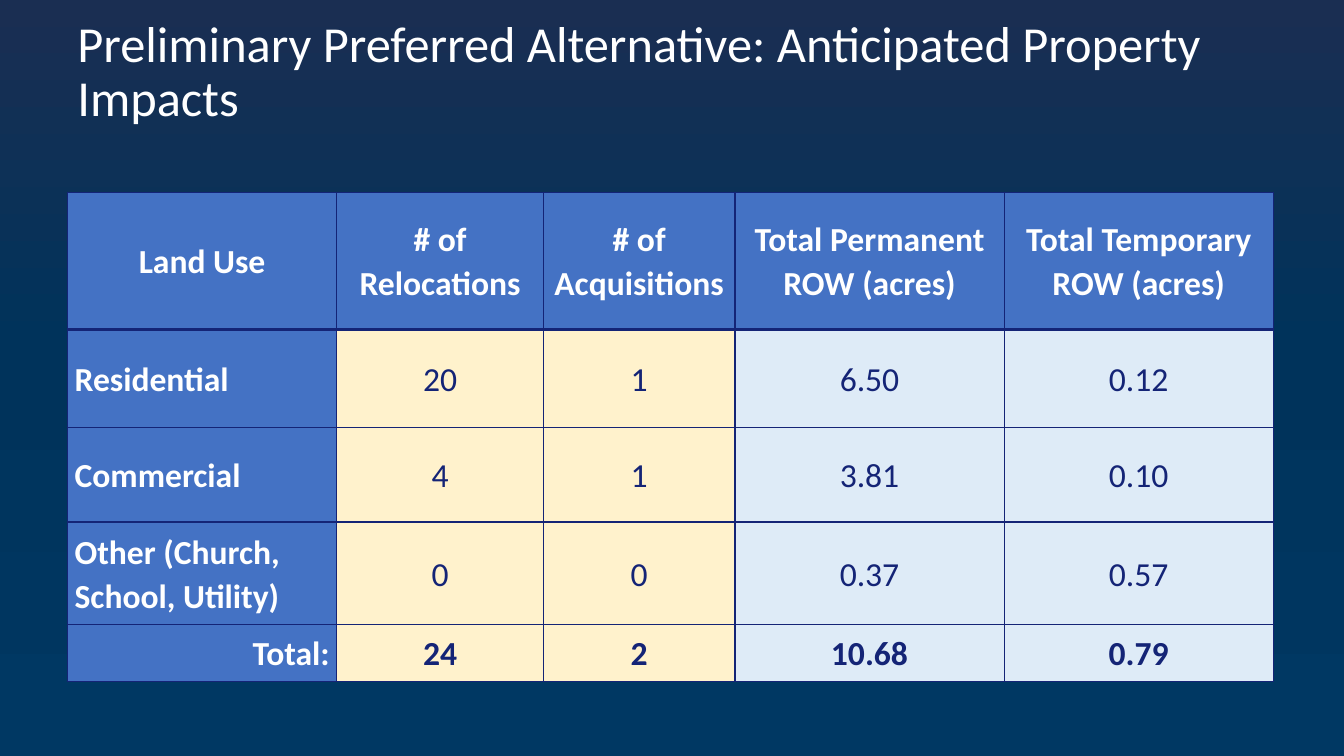
from dataclasses import dataclass

from lxml.etree import SubElement
from pptx import Presentation
from pptx.dml.color import RGBColor
from pptx.enum.text import MSO_ANCHOR as Anchor, PP_ALIGN as Align
from pptx.oxml import parse_xml
from pptx.oxml.ns import nsdecls, qn
from pptx.util import Inches, Pt


@dataclass(frozen=True)
class Theme:
    """Colours, font and type sizes of the deck."""
    font: str = "Calibri"
    title_size: int = 36
    table_size: int = 24
    white: str = "FFFFFF"
    navy: str = "142476"
    blue: str = "4472C4"
    cream: str = "FFF2CC"
    pale_blue: str = "DEEBF7"
    backdrop: tuple = ((0, "1A2E52"), (46, "00335B"), (100, "003863"), (100, "003A68"))


class SlideBuilder:
    """Draws styled elements on the current slide."""

    def __init__(self, page, theme):
        """Keep the slide and its theme."""
        self.page = page
        self.theme = theme

    def background(self):
        """Fill the slide with the vertical gradient."""
        fill = self.page.background.fill
        fill.gradient()
        fill.gradient_angle = 270
        stops = next(self.page.element.iter(qn("a:gsLst")))
        for stop in list(stops):
            stops.remove(stop)
        for percent, colour in self.theme.backdrop:
            stop = SubElement(stops, qn("a:gs"), pos=str(percent * 1000))
            SubElement(stop, qn("a:srgbClr"), val=colour)

    def label(self, frame, text, size, colour, bold=False, align=Align.LEFT, spacing=1.0):
        """Put one styled run into a text frame."""
        frame.word_wrap = True
        para = frame.paragraphs[0]
        para.alignment = align
        para.line_spacing = spacing
        span = para.add_run()
        span.text = text
        span.font.name = self.theme.font
        span.font.size = Pt(size)
        span.font.bold = bold
        span.font.color.rgb = RGBColor.from_string(colour)

    def title(self, text, left, top, width, height):
        """Add the slide heading."""
        box = self.page.shapes.add_textbox(
            Inches(left), Inches(top), Inches(width), Inches(height))
        box.text_frame.vertical_anchor = Anchor.MIDDLE
        self.label(box.text_frame, text, self.theme.title_size, self.theme.white, spacing=0.9)

    def borders(self, cell, top, bottom):
        """Outline a cell with the given top and bottom weights."""
        sides = {"lnL": 1, "lnR": 1, "lnT": top, "lnB": bottom}
        properties = cell._tc.get_or_add_tcPr()
        for position, (side, weight) in enumerate(sides.items()):
            properties.insert(position, parse_xml(
                f'<a:{side} {nsdecls("a")} w="{Pt(weight)}"><a:solidFill>'
                f'<a:srgbClr val="{self.theme.navy}"/></a:solidFill></a:{side}>'))

    def cell(self, cell, text, fill, colour, bold, align, margin):
        """Fill and label one table cell."""
        cell.fill.solid()
        cell.fill.fore_color.rgb = RGBColor.from_string(fill)
        cell.vertical_anchor = Anchor.MIDDLE
        cell.margin_left = cell.margin_right = Inches(margin)
        cell.margin_top = cell.margin_bottom = 0
        self.label(cell.text_frame, text, self.theme.table_size, colour, bold, align, 1.07)

    def table(self, rows, left, top, widths, heights):
        """Add the table with header row, label column and total row."""
        theme = self.theme
        table = self.page.shapes.add_table(
            len(heights), len(widths), Inches(left), Inches(top),
            Inches(sum(widths)), Inches(sum(heights))).table
        table.first_row = table.horz_banding = False
        for column, width in zip(table.columns, widths):
            column.width = Inches(width)
        for row, height in zip(table.rows, heights):
            row.height = Inches(height)
        fills = (theme.blue, theme.cream, theme.cream, theme.pale_blue, theme.pale_blue)
        last = len(rows) - 1
        for r, texts in enumerate(rows):
            for c, text in enumerate(texts):
                heading = r == 0 or c == 0
                align = Align.CENTER
                if c == 0 and r > 0:
                    align = Align.RIGHT if r == last else Align.LEFT
                cell = table.cell(r, c)
                self.cell(cell, text,
                          fill=theme.blue if heading else fills[c],
                          colour=theme.white if heading else theme.navy,
                          bold=heading or r == last,
                          align=align,
                          margin=0 if c in (1, 2) else 0.07)
                self.borders(cell, top=3 if r == 1 else 1, bottom=3 if r == 0 else 1)


IMPACTS = (
    ("Land Use", "# of Relocations", "# of Acquisitions",
     "Total Permanent ROW (acres)", "Total Temporary ROW (acres)"),
    ("Residential", "20", "1", "6.50", "0.12"),
    ("Commercial", "4", "1", "3.81", "0.10"),
    ("Other (Church, School, Utility)", "0", "0", "0.37", "0.57"),
    ("Total:", "24", "2", "10.68", "0.79"),
)


def main():
    """Build and save the deck."""
    deck = Presentation()
    deck.slide_width, deck.slide_height = Inches(13.33), Inches(7.5)
    builder = SlideBuilder(deck.slides.add_slide(deck.slide_layouts[6]), Theme())
    builder.background()
    builder.title("Preliminary Preferred Alternative: Anticipated Property Impacts",
                  0.67, 0, 11.5, 1.45)
    builder.table(IMPACTS, 0.67, 1.91,
                  widths=(2.67, 2.05, 1.9, 2.67, 2.67),
                  heights=(1.36, 0.97, 0.94, 1.02, 0.56))
    deck.save("out.pptx")


if __name__ == "__main__":
    main()
